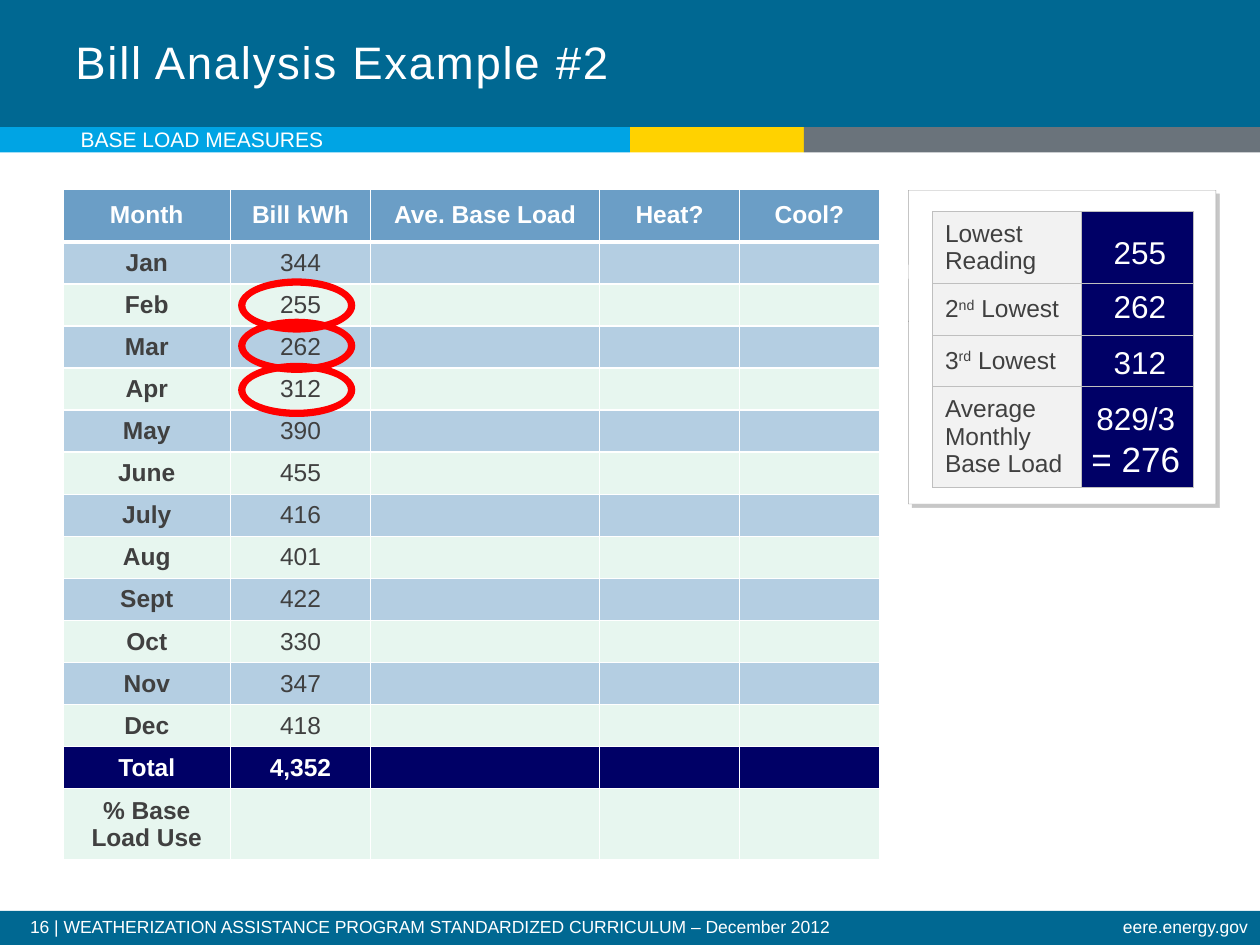
import pptx
import pptx.util
import pptx.dml.color
import pptx.enum.shapes
import pptx.enum.text
import pptx.oxml.ns
from lxml import etree

Inches, Pt = pptx.util.Inches, pptx.util.Pt
Shape = pptx.enum.shapes.MSO_SHAPE
Align = pptx.enum.text.PP_ALIGN
Anchor = pptx.enum.text.MSO_ANCHOR
Fit = pptx.enum.text.MSO_AUTO_SIZE
qn = pptx.oxml.ns.qn

WHITE, DARK, NAVY, BLUE = "FFFFFF", "404040", "000066", "006892"
STEEL, MINT, PALE = "6B9EC6", "E7F6EF", "F2F2F2"


def color(code):
    return pptx.dml.color.RGBColor.from_string(code)


def apply(target, values):
    for name, value in values.items():
        setattr(target, name, value)


def fade(fill, percent):
    """Make a solid fill partly transparent."""
    tone = fill._xPr.find(qn("a:solidFill"))[0]
    etree.SubElement(tone, qn("a:alpha"), val=str(percent * 1000))


class Deck:
    font = "Arial"

    def __init__(self):
        self.show = pptx.Presentation()
        self.show.slide_width, self.show.slide_height = Inches(10), Inches(7.5)
        self.slide = self.show.slides.add_slide(self.show.slide_layouts[6])

    def style(self, run, size, code, bold=False):
        apply(run.font, {"name": self.font, "size": Pt(size), "bold": bold})
        run.font.color.rgb = color(code)

    def shape(self, kind, box, fill, adjust=()):
        item = self.slide.shapes.add_shape(kind, *map(Inches, box))
        item.shadow.inherit = False
        item.fill.solid()
        item.fill.fore_color.rgb = color(fill)
        item.line.fill.background()
        for i, value in enumerate(adjust):
            item.adjustments[i] = value
        return item

    def text(self, box, lines, form=None, para=None, space=0):
        """Add a white text box; lines holds (text, size) pairs."""
        frame = self.slide.shapes.add_textbox(*map(Inches, box)).text_frame
        apply(frame, {"word_wrap": True, **(form or {})})
        for i, (words, size) in enumerate(lines):
            part = frame.add_paragraph() if i else frame.paragraphs[0]
            apply(part, para or {})
            run = part.add_run()
            run.text = words
            self.style(run, size, WHITE)
            if space:
                run.font._element.set("spc", str(space * 100))

    def table(self, box, cols, rows):
        grid = self.slide.shapes.add_table(
            len(rows), len(cols), *map(Inches, box)).table
        apply(grid, {"first_row": False, "horz_banding": False})
        for col, width in zip(grid.columns, cols):
            col.width = Inches(width)
        for row, height in zip(grid.rows, rows):
            row.height = Inches(height)
        return grid

    def cell(self, cell, runs, fill, edges, code=DARK, bold=False,
             align=Align.LEFT, alpha=100):
        """Fill a cell; runs holds (text, raise percent) pairs."""
        cell.vertical_anchor = Anchor.MIDDLE
        cell.fill.solid()
        cell.fill.fore_color.rgb = color(fill)
        if alpha < 100:
            fade(cell.fill, alpha)
        part = cell.text_frame.paragraphs[0]
        part.alignment = align
        for words, lift in runs:
            run = part.add_run()
            run.text = words
            self.style(run, 14, code, bold)
            if lift:
                run.font._element.set("baseline", str(lift * 1000))
        if not runs:
            etree.SubElement(part._p, qn("a:endParaRPr"), sz="1400")
        # Borders come before the fill, in the order left, right, top, bottom
        props = cell._tc.get_or_add_tcPr()
        for i, (side, (tone, width)) in enumerate(zip("LRTB", edges)):
            line = etree.Element(qn("a:ln" + side), w=str(Pt(width)))
            solid = etree.SubElement(line, qn("a:solidFill"))
            etree.SubElement(solid, qn("a:srgbClr"), val=tone)
            props.insert(i, line)


def main():
    deck = Deck()

    # Header and footer bands
    for box, fill in [((0, 0, 10, 1.01), BLUE),
                      ((0, 7.23, 10, 0.27), BLUE),
                      ((0, 1.01, 5, 0.2), "00A4E4"),
                      ((5, 1.01, 1.38, 0.2), "FFD200"),
                      ((6.38, 1.01, 3.62, 0.2), "6A737B")]:
        deck.shape(Shape.RECTANGLE, box, fill)

    # Footer and title
    deck.text((0.14, 7.24, 7.97, 0.26),
              [("16 | WEATHERIZATION ASSISTANCE PROGRAM STANDARDIZED "
                "CURRICULUM – December 2012", 10)],
              para={"line_spacing": 0.9})
    deck.text((5.99, 7.24, 4.01, 0.26), [("eere.energy.gov", 10)],
              para={"line_spacing": 0.9, "alignment": Align.RIGHT})
    deck.text((0.5, 0.05, 5.92, 0.92), [("Bill Analysis Example #2", 26)],
              {"vertical_anchor": Anchor.MIDDLE},
              {"line_spacing": Pt(28)}, space=1)

    # Monthly bills
    heads = ["Month", "Bill kWh", "Ave. Base Load", "Heat?", "Cool?"]
    bills = [("Jan", "344"), ("Feb", "255"), ("Mar", "262"), ("Apr", "312"),
             ("May", "390"), ("June", "455"), ("July", "416"),
             ("Aug", "401"), ("Sept", "422"), ("Oct", "330"),
             ("Nov", "347"), ("Dec", "418")]
    rows = [heads, *bills, ("Total", "4,352"), ("% Base Load Use",)]
    last = len(rows) - 1
    grid = deck.table((0.5, 1.5, 6.48, 4.83), [1.33, 1.11, 1.82, 1.11, 1.11],
                      [0.42] + [0.3] * (last - 1) + [0.51])
    thin, thick = (WHITE, 1), (WHITE, 3)
    for r, row in enumerate(rows):
        strong = r in (0, last - 1)
        striped = r % 2 == 1 and not strong
        fill = STEEL if r == 0 or striped else NAVY if strong else MINT
        edges = [thin, thin, thick if r == 1 else thin,
                 thick if r == 0 else thin]
        for c in range(len(heads)):
            runs = [(row[c], 0)] if c < len(row) else []
            deck.cell(grid.cell(r, c), runs, fill, edges,
                      WHITE if strong else DARK, strong or c == 0,
                      Align.CENTER, 50 if striped else 100)

    # Callout panel with its shadow
    panel = deck.shape(Shape.RECTANGULAR_CALLOUT, (7.21, 1.51, 2.44, 2.49),
                       WHITE, (-0.499, -0.081))
    panel.line.color.rgb = color("A6A6A6")
    panel.line.width = Pt(0.25)
    effects = panel._element.spPr.find(qn("a:effectLst"))
    shade = etree.SubElement(effects, qn("a:outerShdw"), blurRad="0",
                             dist=str(Pt(3)), dir=str(45 * 60000),
                             algn="tl", rotWithShape="0")
    tone = etree.SubElement(shade, qn("a:srgbClr"), val="808080")
    etree.SubElement(tone, qn("a:alpha"), val="43000")

    # Lowest readings
    labels = [[("Lowest Reading", 0)],
              [("2", 0), ("nd", 30), (" Lowest", 0)],
              [("3", 0), ("rd", 30), (" Lowest", 0)],
              [("Average Monthly Base Load", 0)]]
    grid = deck.table((7.4, 1.68, 2.07, 2.11), [1.18, 0.89],
                      [0.54, 0.41, 0.41, 0.75])
    edges = [("BFBFBF", 0.25)] * 4
    for r, runs in enumerate(labels):
        deck.cell(grid.cell(r, 0), runs, PALE, edges)
        deck.cell(grid.cell(r, 1), [], NAVY, edges)

    # Rings on the three lowest bills, and their values in the panel
    loose = {"word_wrap": False, "auto_size": Fit.SHAPE_TO_FIT_TEXT}
    for value, ring, top in [("255", 2.21, 1.8), ("262", 2.53, 2.23),
                             ("312", 2.88, 2.67)]:
        deck.shape(Shape.DONUT, (1.89, ring, 0.93, 0.43), "FF0000", (0.135,))
        deck.text((8.74, top, 0.62, 0.4), [(value, 18)], loose)
    deck.text((8.56, 3.12, 0.91, 0.74), [("829/3", 18), ("= 276", 20)],
              loose, {"alignment": Align.CENTER})

    # Section name
    sides = ("left", "top", "right", "bottom")
    deck.text((0.64, 0.98, 6.92, 0.25), [("BASE LOAD MEASURES", 12)],
              {"vertical_anchor": Anchor.MIDDLE,
               **{"margin_" + side: 0 for side in sides}})

    deck.show.save("out.pptx")


if __name__ == "__main__":
    main()
